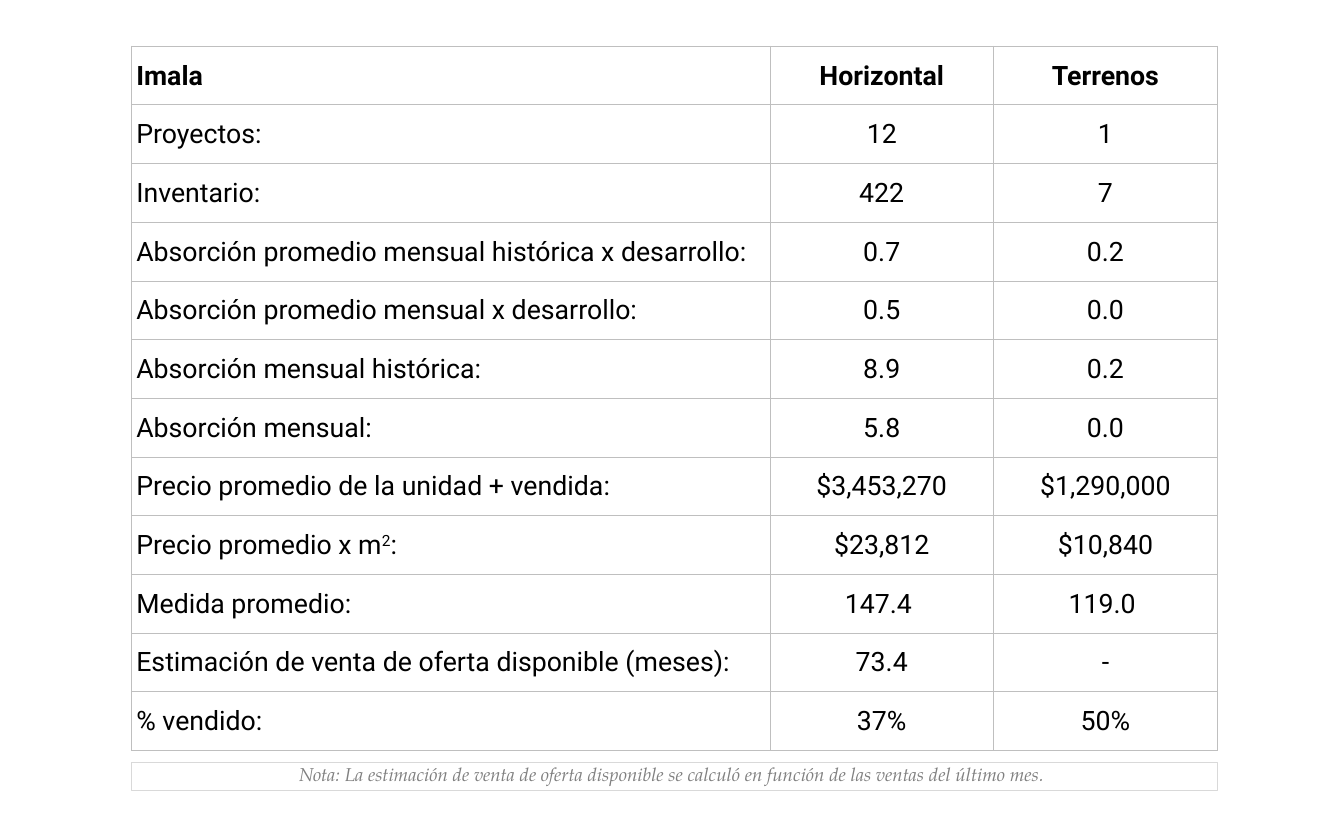
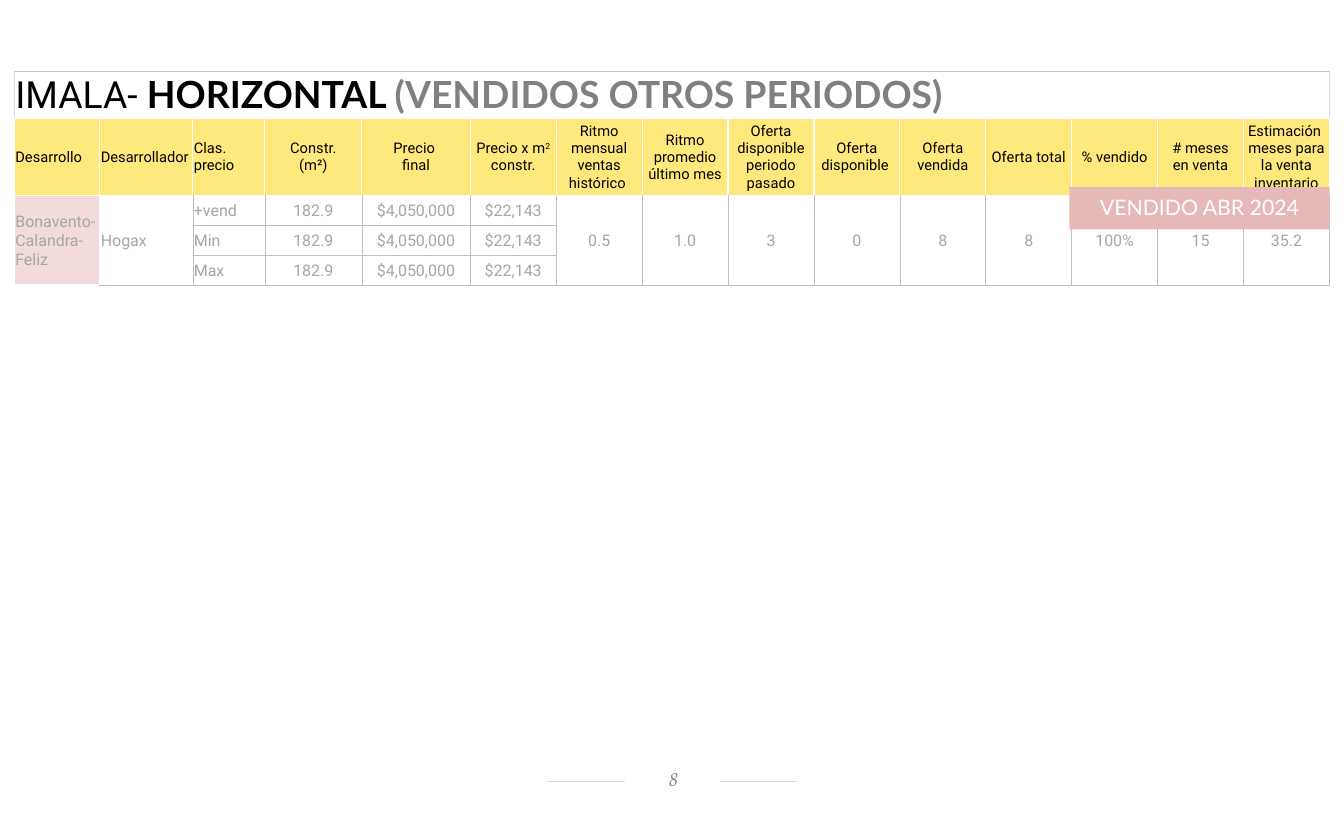
"""Builds two slides with housing market tables for the Imala area."""
from dataclasses import dataclass, replace

from lxml import etree
from pptx import Presentation
from pptx.dml.color import RGBColor
from pptx.enum.shapes import MSO_CONNECTOR, MSO_SHAPE
from pptx.enum.text import MSO_ANCHOR, PP_ALIGN
from pptx.oxml.ns import qn
from pptx.util import Inches, Pt

LEFT, CENTER = PP_ALIGN.LEFT, PP_ALIGN.CENTER
TOP, MIDDLE = MSO_ANCHOR.TOP, MSO_ANCHOR.MIDDLE
RECT, STRAIGHT = MSO_SHAPE.RECTANGLE, MSO_CONNECTOR.STRAIGHT


@dataclass(frozen=True)
class Type:
    font: str
    size: int
    color: str
    bold: bool = False
    slant: bool = False
    base: int = 0


@dataclass(frozen=True)
class Theme:
    white: str = "FFFFFF"
    rule: str = "D9D9D9"
    grid: str = "BFBFBF"
    head: str = "FFE97D"
    blush: str = "F2DCDB"
    rose: str = "E6B9B8"
    note: Type = Type("TeX Gyre Pagella", 14, "808080", slant=True)
    large: Type = Type("Roboto", 20, "000000")
    label: Type = Type("Roboto", 11, "000000")
    pale: Type = Type("Roboto", 12, "A6A6A6")
    title: Type = Type("Roboto", 28, "000000")
    strong: Type = Type("Lato", 28, "000000", bold=True)
    muted: Type = Type("Lato", 28, "808080", bold=True)
    badge: Type = Type("Lato", 16, "FFFFFF")


THEME = Theme()
THIN = (THEME.grid, 0.5)
WHITE = (THEME.white, 1)
THICK = (THEME.white, 1.5)
EDGE = (THEME.rule, 1)

SUMMARY = [
    ("Imala", "Horizontal", "Terrenos"),
    ("Proyectos:", "12", "1"),
    ("Inventario:", "422", "7"),
    ("Absorción promedio mensual histórica x desarrollo:", "0.7", "0.2"),
    ("Absorción promedio mensual x desarrollo:", "0.5", "0.0"),
    ("Absorción mensual histórica:", "8.9", "0.2"),
    ("Absorción mensual:", "5.8", "0.0"),
    ("Precio promedio de la unidad + vendida:", "$3,453,270", "$1,290,000"),
    ("Precio promedio x m^2^:", "$23,812", "$10,840"),
    ("Medida promedio:", "147.4 ", "119.0 "),
    ("Estimación de venta de oferta disponible (meses):", "73.4", "-"),
    ("% vendido:", "37%", "50%"),
]
HEADS = [
    "Desarrollo", "Desarrollador", "Clas.\nprecio", "Constr.\n(m²)",
    "Precio \nfinal", "Precio x m^2 ^constr.",
    "Ritmo mensual ventas histórico ", "Ritmo promedio último mes",
    "Oferta disponible periodo pasado", "Oferta disponible ",
    "Oferta vendida", "Oferta total", "% vendido", "# meses\nen venta",
    "Estimación \nmeses para\nla venta\ninventario",
]
PRICES = [(kind, "182.9", "$4,050,000", "$22,143")
          for kind in ("+vend", "Min", "Max")]
TOTALS = ["0.5", "1.0", "3", "0", "8", "8", "100%", "15", "35.2"]


class Deck:
    """Holds the theme and the current slide."""

    def __init__(self, theme):
        self.theme = theme
        self.show = Presentation()
        self.show.slide_width = Inches(14)
        self.show.slide_height = Inches(8.5)
        self.slide = None

    def page(self):
        """Starts a blank slide."""
        self.slide = self.show.slides.add_slide(self.show.slide_layouts[6])

    def run(self, para, text, style):
        """Adds one run in the given style."""
        run = para.add_run()
        run.text = text
        font = run.font
        font.name, font.size = style.font, Pt(style.size)
        font.bold, font.italic = style.bold, style.slant
        font.color.rgb = RGBColor.from_string(style.color)
        if style.base:
            run._r.get_or_add_rPr().set("baseline", str(style.base))

    def text(self, frame, text, style, align):
        """Writes lines as paragraphs, with carets around raised text."""
        for i, line in enumerate(text.split("\n")):
            para = frame.add_paragraph() if i else frame.paragraphs[0]
            para.alignment = align
            for j, part in enumerate(line.split("^")):
                if part:
                    raised = replace(style, base=30000 if j % 2 else 0)
                    self.run(para, part, raised)

    def box(self, place, text, style, fill, line=None, anchor=MIDDLE,
            inset=(0.1, 0.05, 0.1, 0.05), wrap=True):
        """Adds a filled rectangle with centred text."""
        box = self.slide.shapes.add_shape(RECT, *map(Inches, place))
        box.shadow.inherit = False
        box.fill.solid()
        box.fill.fore_color.rgb = RGBColor.from_string(fill)
        if line:
            box.line.color.rgb = RGBColor.from_string(line)
            box.line.width = Pt(0.75)
        else:
            box.line.fill.background()
        frame = box.text_frame
        frame.word_wrap, frame.vertical_anchor = wrap, anchor
        (frame.margin_left, frame.margin_top,
         frame.margin_right, frame.margin_bottom) = map(Inches, inset)
        self.text(frame, text, style, CENTER)
        return frame.paragraphs[0]

    def line(self, start, end):
        """Adds a thin straight rule."""
        line = self.slide.shapes.add_connector(
            STRAIGHT, *map(Inches, start + end))
        line.line.color.rgb = RGBColor.from_string(self.theme.rule)
        line.line.width = Pt(0.75)
        etree.SubElement(line._element.spPr, qn("a:effectLst"))

    def table(self, place, cols, rows):
        """Adds a plain table with the given column and row sizes."""
        table = self.slide.shapes.add_table(
            len(rows), len(cols), *map(Inches, place)).table
        table.first_row = table.horz_banding = False
        for col, width in zip(table.columns, cols):
            col.width = Inches(width)
        for row, height in zip(table.rows, rows):
            row.height = Inches(height)
        return table

    def cell(self, cell, edges, fill=None, pad=0.01):
        """Sets left, right, top and bottom edges, margins and fill."""
        cell.vertical_anchor = MIDDLE
        cell.margin_left = Inches(pad)
        cell.margin_right = cell.margin_top = Inches(0.01)
        cell.margin_bottom = 0
        props = cell._tc.get_or_add_tcPr()
        for side, (color, width) in zip("LRTB", edges):
            edge = etree.SubElement(props, qn("a:ln" + side), w=str(Pt(width)))
            solid = etree.SubElement(edge, qn("a:solidFill"))
            etree.SubElement(solid, qn("a:srgbClr"), val=color)
        if fill:
            cell.fill.solid()
            cell.fill.fore_color.rgb = RGBColor.from_string(fill)
        else:
            cell.fill.background()

    def folio(self, number):
        """Adds the page number over its rule."""
        self.line((5.71, 8.14), (8.29, 8.14))
        self.box((6.51, 7.98, 0.99, 0.29), number, self.theme.note,
                 self.theme.white, inset=(0.12, 0.02, 0.1, 0.05))


def summary(deck):
    """Draws the area summary."""
    theme = deck.theme
    deck.page()
    para = deck.box(
        (1.37, 7.94, 11.31, 0.29),
        "Nota: La estimación de venta de oferta disponible se calculó "
        "en función de las ventas del último mes. ",
        theme.note, theme.white, theme.rule, TOP)
    para.line_spacing = 0.8
    table = deck.table((1.37, 0.48, 11.31, 7.34), (6.65, 2.33, 2.33),
                       [7.34 / len(SUMMARY)] * len(SUMMARY))
    for r, row in enumerate(SUMMARY):
        style = replace(theme.large, bold=r == 0)
        for c, text in enumerate(row):
            cell = table.cell(r, c)
            deck.cell(cell, [THIN] * 4, theme.white, 0.01 if c else 0.05)
            deck.text(cell.text_frame, text, style, CENTER if c else LEFT)


def detail(deck):
    """Draws the table of sold projects."""
    theme = deck.theme
    deck.page()
    deck.folio("8")
    first = [0.89, 0.97, 0.75, 1.01, 1.13]
    count = len(HEADS) - len(first)
    cols = first + [(13.7 - sum(first)) / count] * count
    table = deck.table((0.15, 0.74, 13.7, 2.2), cols,
                       (0.39, 0.81, 0.31, 0.31, 0.31))

    for c, head in enumerate(HEADS):
        deck.cell(table.cell(0, c), (EDGE, EDGE, THIN, WHITE))
        cell = table.cell(1, c)
        deck.cell(cell, [WHITE] * 4, theme.head)
        deck.text(cell.text_frame, head, theme.label,
                  LEFT if c < 3 else CENTER)
        for r in (2, 3, 4):
            top = WHITE if r == 2 else THIN
            edges = {0: (THICK, THICK, WHITE, THICK),
                     1: (THICK, THIN, WHITE, THIN)}
            deck.cell(table.cell(r, c), edges.get(c, (THIN, THIN, top, THIN)),
                      None if c else theme.blush)

    title = table.cell(0, 0)
    title.merge(table.cell(0, len(HEADS) - 1))
    para = title.text_frame.paragraphs[0]
    for text, style in (("IMALA- ", theme.title),
                        ("HORIZONTAL ", theme.strong),
                        ("(VENDIDOS OTROS PERIODOS)", theme.muted)):
        deck.run(para, text, style)

    for r, row in enumerate(PRICES, 2):
        for c, text in enumerate(row, 2):
            deck.text(table.cell(r, c).text_frame, text, theme.pale,
                      LEFT if c == 2 else CENTER)
    tall = {0: "Bonavento-Calandra-Feliz", 1: "Hogax"}
    tall.update(enumerate(TOTALS, 6))
    for c, text in tall.items():
        cell = table.cell(2, c)
        cell.merge(table.cell(4, c))
        deck.text(cell.text_frame, text, theme.pale, LEFT if c < 2 else CENTER)

    para = deck.box((11.14, 1.95, 2.71, 0.44), "VENDIDO ABR 2024",
                    theme.badge, theme.rose, anchor=TOP,
                    inset=(0.14, 0.07, 0.14, 0.07), wrap=False)
    para.space_after = Pt(4)


def main():
    """Builds and saves the slides."""
    deck = Deck(THEME)
    summary(deck)
    detail(deck)
    deck.show.save("out.pptx")


if __name__ == "__main__":
    main()
